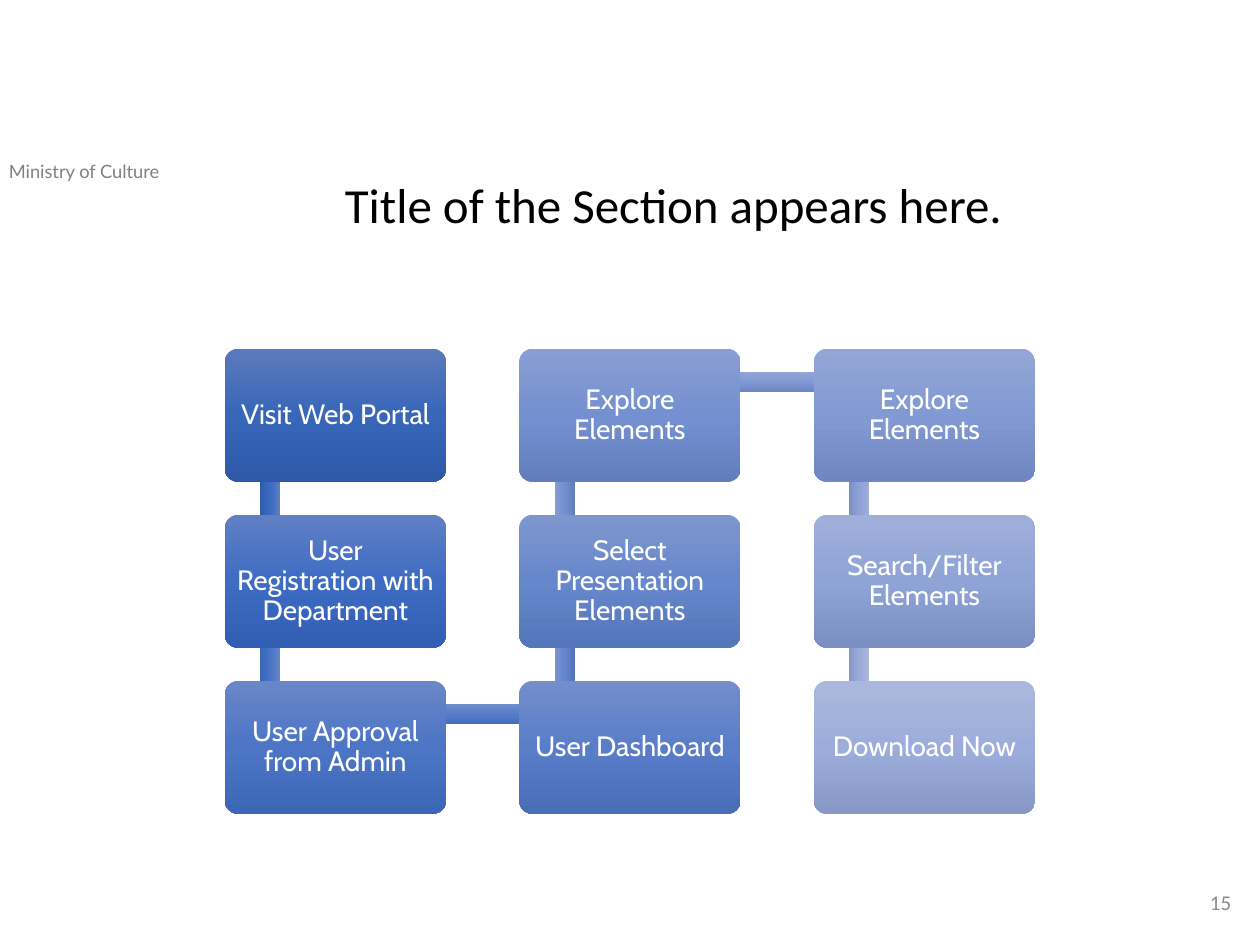
"""Build a section slide with a snaking nine-step portal process."""
from copy import deepcopy

from pptx import Presentation
from pptx.dml.color import RGBColor as RGB
from pptx.enum.shapes import MSO_SHAPE as SHAPE
from pptx.enum.text import MSO_ANCHOR as ANCHOR, PP_ALIGN as ALIGN
from pptx.oxml.ns import qn
from pptx.util import Pt

BLACK = RGB(0x00, 0x00, 0x00)
WHITE = RGB(0xFF, 0xFF, 0xFF)
HEADER_GREY = RGB(0x80, 0x80, 0x80)
NUMBER_GREY = RGB(0x8C, 0x8C, 0x8C)

BOX_W, BOX_H = 126.5, 75.9
LEFT, TOP = 128.4, 199.3
PITCH_X, PITCH_Y = 168.3, 94.9
JOINT_X, JOINT_Y = 26, 19
BAR_H = 11.5


def ramp(*colors):
    return [RGB.from_string(c) for c in colors]


STEPS = [
    ("Visit Web Portal", 0, 0, ramp("5C7ABD", "3866B8", "2D59A8")),
    ("User Registration with Department", 0, 1, ramp("617FC4", "3E6CC3", "315EB3")),
    ("User Approval from Admin", 0, 2, ramp("6A86C8", "4C75C6", "3D66B6")),
    ("User Dashboard", 1, 2, ramp("748ECB", "597DC9", "4A6DB8")),
    ("Select Presentation Elements", 1, 1, ramp("7E96CE", "6787CC", "5676BB")),
    ("Explore Elements", 1, 0, ramp("899ED2", "7590D0", "637EBD")),
    ("Explore Elements", 2, 0, ramp("94A6D6", "8299D3", "6F86C0")),
    ("Search/Filter Elements", 2, 1, ramp("A0AFD9", "8FA3D7", "7B8FC3")),
    ("Download Now", 2, 2, ramp("ABB8DD", "9CADDB", "8798C6")),
]

BAR_RAMPS = [
    ramp("5E7EC4", "3B6BC1", "2F5EB1"),
    ramp("6785C7", "4873C6", "3965B6"),
    ramp("718DCB", "567CC9", "476CB8"),
    ramp("7C95CE", "6485CC", "5475BB"),
    ramp("879DD2", "728FD0", "617DBD"),
    ramp("93A6D5", "8098D3", "6D85C0"),
    ramp("9FAED9", "8EA2D7", "7A8EC3"),
    ramp("AAB7DD", "9BACDB", "8697C6"),
]


def style_text(tf, text, font, size, color, align=ALIGN.LEFT, anchor=ANCHOR.TOP):
    tf.word_wrap = True
    tf.vertical_anchor = anchor
    p = tf.paragraphs[0]
    p.text = text
    p.alignment = align
    r = p.runs[0]
    r.font.name = font
    r.font.size = Pt(size)
    r.font.color.rgb = color
    return p


def add_label(s, x, y, w, h, *args, **kwargs):
    tb = s.shapes.add_textbox(Pt(x), Pt(y), Pt(w), Pt(h))
    return style_text(tb.text_frame, *args, **kwargs)


def add_gradient_shape(s, kind, x, y, w, h, colors):
    sp = s.shapes.add_shape(kind, Pt(x), Pt(y), Pt(w), Pt(h))
    sp.shadow.inherit = False
    sp.line.fill.background()
    sp.fill.gradient()
    sp.fill.gradient_angle = 270
    stops = sp._element.spPr.find(qn("a:gradFill")).find(qn("a:gsLst"))
    stops.insert(1, deepcopy(stops[0]))
    for stop, color, position in zip(sp.fill.gradient_stops, colors, (0, 0.5, 1)):
        stop.color.rgb = color
        stop.position = position
    return sp


def box_origin(col, row):
    return LEFT + col * PITCH_X, TOP + row * PITCH_Y


def add_bar(s, start, end, colors):
    (x1, y1), (x2, y2) = box_origin(*start), box_origin(*end)
    length = abs(x2 - x1) + abs(y2 - y1)
    cx = (x1 + x2) / 2 + JOINT_X
    cy = (y1 + y2) / 2 + JOINT_Y
    sp = add_gradient_shape(s, SHAPE.RECTANGLE, cx - length / 2, cy - BAR_H / 2,
                            length, BAR_H, colors)
    if y1 != y2:
        sp.rotation = 90 if y2 > y1 else 270


def add_step(s, text, col, row, colors):
    x, y = box_origin(col, row)
    sp = add_gradient_shape(s, SHAPE.ROUNDED_RECTANGLE, x, y, BOX_W, BOX_H, colors)
    sp.adjustments[0] = 0.1
    tf = sp.text_frame
    tf.margin_left = tf.margin_right = tf.margin_top = tf.margin_bottom = Pt(4.8)
    p = style_text(tf, text, "Cabin", 16, WHITE, ALIGN.CENTER, ANCHOR.MIDDLE)
    p.line_spacing = 0.9


def add_process(s):
    for i, (text, col, row, colors) in enumerate(STEPS):
        if i < len(BAR_RAMPS):
            add_bar(s, (col, row), STEPS[i + 1][1:3], BAR_RAMPS[i])
        add_step(s, text, col, row, colors)


def main():
    prs = Presentation()
    prs.slide_width, prs.slide_height = Pt(720), Pt(540)
    s = prs.slides.add_slide(prs.slide_layouts[6])
    add_label(s, -2, 88, 157, 20, "Ministry of Culture", "Lato", 10.5, HEADER_GREY)
    add_process(s)
    add_label(s, 548.6, 501, 162, 28.8, "15", "Calibri", 12, NUMBER_GREY,
              align=ALIGN.RIGHT, anchor=ANCHOR.MIDDLE)
    title = add_label(s, 190, 100, 408, 57, "Title of the Section appears here.",
                      "Calibri", 28, BLACK)
    title.line_spacing = 0.9
    prs.save("out.pptx")


if __name__ == "__main__":
    main()
